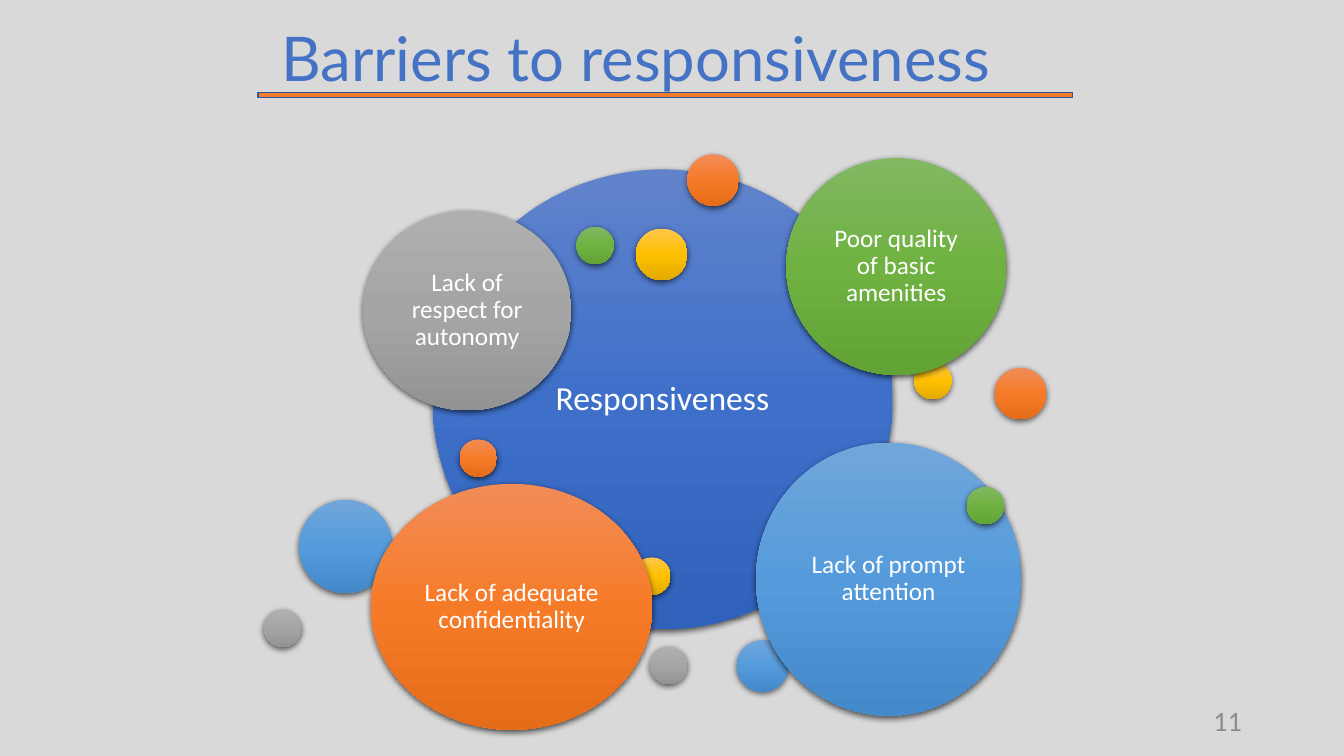
from copy import deepcopy
from lxml import etree
from pptx import Presentation
from pptx.dml.color import RGBColor
from pptx.enum import shapes, text
from pptx.oxml import ns
from pptx.util import Pt

TITLE = "Barriers to responsiveness"
PAGE = "11"
GRADIENTS = {
    "blue": ("6183CB", "3E70CA", "3062BB"),
    "orange": ("F18C57", "F67B28", "E56C19"),
    "grey": ("AFAFAF", "A5A5A5", "939393"),
    "yellow": ("FFC64B", "FFC000", "E3AB00"),
    "sky": ("71A6DB", "559BDB", "448ACA"),
    "green": ("81B861", "6FB242", "62A336"),
}
SMALL, MEDIUM, LARGE = (26.7, 26.7), (36.8, 36.8), (66.4, 66.4)
BUBBLES = [
    ("blue", (309, 121), (328.4, 328.4), "Responsiveness", 24),
    ("orange", (491, 110.2), MEDIUM, "", 0),
    ("yellow", (653, 258.5), SMALL, "", 0),
    ("sky", (526.3, 457.2), MEDIUM, "", 0),
    ("green", (411.8, 162), SMALL, "", 0),
    ("orange", (328.3, 313.9), SMALL, "", 0),
    ("grey", (259.2, 150.5), (149, 142.6), "Lack of respect for autonomy", 18),
    ("yellow", (454.3, 163.4), MEDIUM, "", 0),
    ("sky", (213.8, 357.1), LARGE, "", 0),
    ("green", (561.6, 113), (157, 154.8), "Poor quality of basic amenities", 18),
    ("orange", (710.6, 262.8), MEDIUM, "", 0),
    ("grey", (188.6, 435.6), SMALL, "", 0),
    ("yellow", (452.2, 398.2), SMALL, "", 0),
    ("sky", (540, 316.1), (189.4, 195.1), "Lack of prompt attention", 18),
    ("green", (690.5, 347.8), SMALL, "", 0),
    ("orange", (265, 345.6), (200.9, 175.7), "Lack of adequate confidentiality", 18),
    ("grey", (464.4, 462.2), SMALL, "", 0),
]


def rgb(value):
    return RGBColor.from_string(value)


def apply(target, values):
    for name, value in values.items():
        setattr(target, name, value)


def write(sp, words, size, font, colour, align, inset, spacing):
    tf = sp.text_frame
    apply(tf, {"word_wrap": True, "vertical_anchor": text.MSO_ANCHOR.MIDDLE, **inset})
    p = tf.paragraphs[0]
    apply(p, {"alignment": align, "line_spacing": spacing})
    r = p.add_run()
    r.text = words
    apply(r.font, {"size": Pt(size), "name": font})
    r.font.color.rgb = rgb(colour)


def shade(sp, colours):
    sp.fill.gradient()
    sp.fill.gradient_angle = 270
    first = sp._element.spPr.find(".//" + ns.qn("a:gs"))
    first.addnext(deepcopy(first))
    for i, (stop, colour) in enumerate(zip(sp.fill.gradient_stops, colours)):
        stop.color.rgb = rgb(colour)
        stop.position = i / 2


def drop_shadow(sp):
    sp.shadow.inherit = False
    effects = sp._element.spPr.find(ns.qn("a:effectLst"))
    shadow = etree.SubElement(effects, ns.qn("a:outerShdw"), blurRad=str(Pt(4.5)),
                              dist=str(Pt(1.5)), dir="5400000", algn="ctr", rotWithShape="0")
    black = etree.SubElement(shadow, ns.qn("a:srgbClr"), val="000000")
    etree.SubElement(black, ns.qn("a:alpha"), val="63000")


def add_bubble(s, colour, corner, size, words, points):
    sp = s.shapes.add_shape(shapes.MSO_SHAPE.OVAL, *map(Pt, corner + size))
    shade(sp, GRADIENTS[colour])
    sp.line.fill.background()
    drop_shadow(sp)
    if words:
        margin = Pt(points * 0.3)
        inset = {f"margin_{side}": margin for side in ("left", "top", "right", "bottom")}
        write(sp, words, points, "Calibri", "FFFFFF", text.PP_ALIGN.CENTER, inset, 0.9)


def main():
    prs = Presentation()
    apply(prs, {"slide_width": Pt(960), "slide_height": Pt(540)})
    s = prs.slides.add_slide(prs.slide_layouts[5])
    s.background.fill.solid()
    s.background.fill.fore_color.rgb = rgb("D9D9D9")

    title = s.shapes.title
    apply(title, {"left": Pt(193.7), "top": Pt(-32.4), "width": Pt(622), "height": Pt(153.4)})
    write(title, TITLE, 44, "Lato", "4472C4", text.PP_ALIGN.LEFT, {}, 0.9)

    for bubble in BUBBLES:
        add_bubble(s, *bubble)

    number = s.shapes.add_textbox(Pt(678.2), Pt(500.4), Pt(216), Pt(28.8))
    write(number, PAGE, 20, "Calibri", "8C8C8C", text.PP_ALIGN.RIGHT, {}, 1.0)

    rule = s.shapes.add_shape(shapes.MSO_SHAPE.RECTANGLE, Pt(184.3), Pt(66.2), Pt(581.8), Pt(3.6))
    rule.shadow.inherit = False
    rule.fill.solid()
    rule.fill.fore_color.rgb = rgb("ED7D31")
    rule.line.color.rgb = rgb("325491")
    rule.line.width = Pt(1)

    prs.save("out.pptx")


if __name__ == "__main__":
    main()
